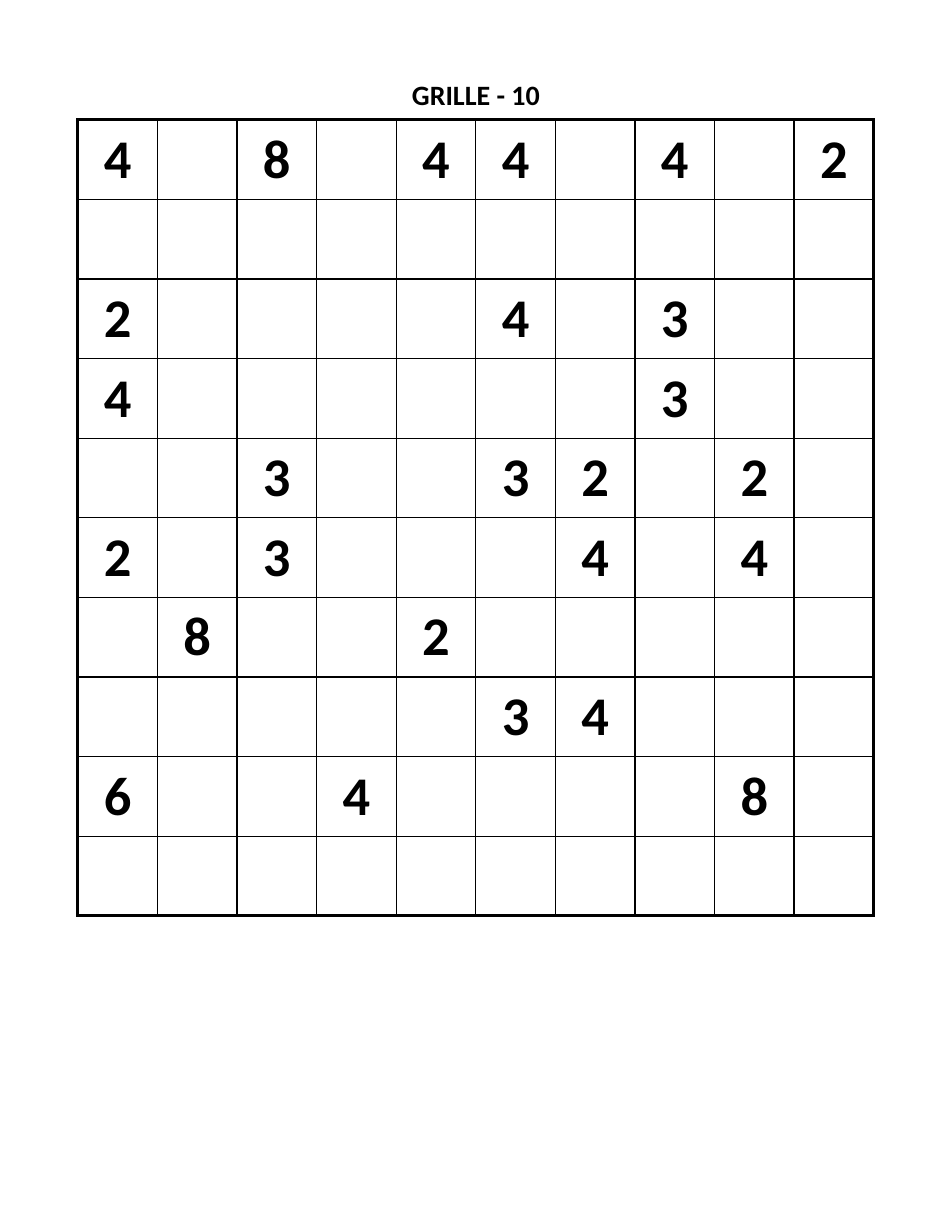
from lxml.etree import SubElement
from pptx import Presentation
from pptx.dml.color import RGBColor
from pptx.enum.text import MSO_ANCHOR as Anchor, MSO_AUTO_SIZE as AutoSize, PP_ALIGN as Align
from pptx.oxml.ns import qn
from pptx.util import Inches, Pt

COLORS = {"ink": "000000", "paper": "FFFFFF"}
FONT = "Calibri"
CLUES = [
    "4.8.44.4.2",
    "..........",
    "2....4.3..",
    "4......3..",
    "..3..32.2.",
    "2.3...4.4.",
    ".8..2.....",
    ".....34...",
    "6..4....8.",
    "..........",
]
SIZE = len(CLUES)
CELL = Inches(0.71)
GRID = Inches(7.11)
TITLE_TOP, TITLE_HEIGHT, GRID_TOP = Inches(0.69), Inches(0.3), Inches(1.07)


def write_centred(text_frame, text, size):
    """Put one bold centred line in a frame without margins."""
    text_frame.text = text
    paragraph = text_frame.paragraphs[0]
    paragraph.alignment = Align.CENTER
    for run in paragraph.runs:
        run.font.name = FONT
        run.font.size = Pt(size)
        run.font.bold = True
        run.font.color.rgb = RGBColor.from_string(COLORS["ink"])


def add_border(cell, side, width):
    line = SubElement(cell._tc.get_or_add_tcPr(), qn(f"a:ln{side}"), w=str(Pt(width)))
    fill = SubElement(line, qn("a:solidFill"))
    SubElement(fill, qn("a:srgbClr"), val=COLORS["ink"])


presentation = Presentation()
presentation.slide_width = Inches(8.5)
presentation.slide_height = Inches(11)
slide = presentation.slides.add_slide(presentation.slide_layouts[6])
left = (presentation.slide_width - GRID) // 2

# Title
title = slide.shapes.add_textbox(left, TITLE_TOP, GRID, TITLE_HEIGHT)
frame = title.text_frame
frame.word_wrap = True
frame.auto_size = AutoSize.SHAPE_TO_FIT_TEXT
frame.margin_left = frame.margin_right = frame.margin_top = frame.margin_bottom = 0
write_centred(frame, "GRILLE - 10", 18)

# Puzzle grid: thin inner lines, a thicker outer frame
table = slide.shapes.add_table(SIZE, SIZE, left, GRID_TOP, GRID, GRID).table
table.first_row = table.horz_banding = False
for line in (*table.columns, *table.rows):
    if hasattr(line, "width"):
        line.width = GRID // SIZE
    else:
        line.height = GRID // SIZE

last = SIZE - 1
for row, clues in enumerate(CLUES):
    for column, clue in enumerate(clues):
        cell = table.cell(row, column)
        outer = {"L": column == 0, "R": column == last, "T": row == 0, "B": row == last}
        for side, is_outer in outer.items():
            add_border(cell, side, 2 if is_outer else 1)
        cell.fill.solid()
        cell.fill.fore_color.rgb = RGBColor.from_string(COLORS["paper"])
        cell.margin_left = cell.margin_right = cell.margin_top = cell.margin_bottom = 0
        cell.vertical_anchor = Anchor.MIDDLE
        if clue != ".":
            write_centred(cell.text_frame, clue, 35)

presentation.save("out.pptx")
